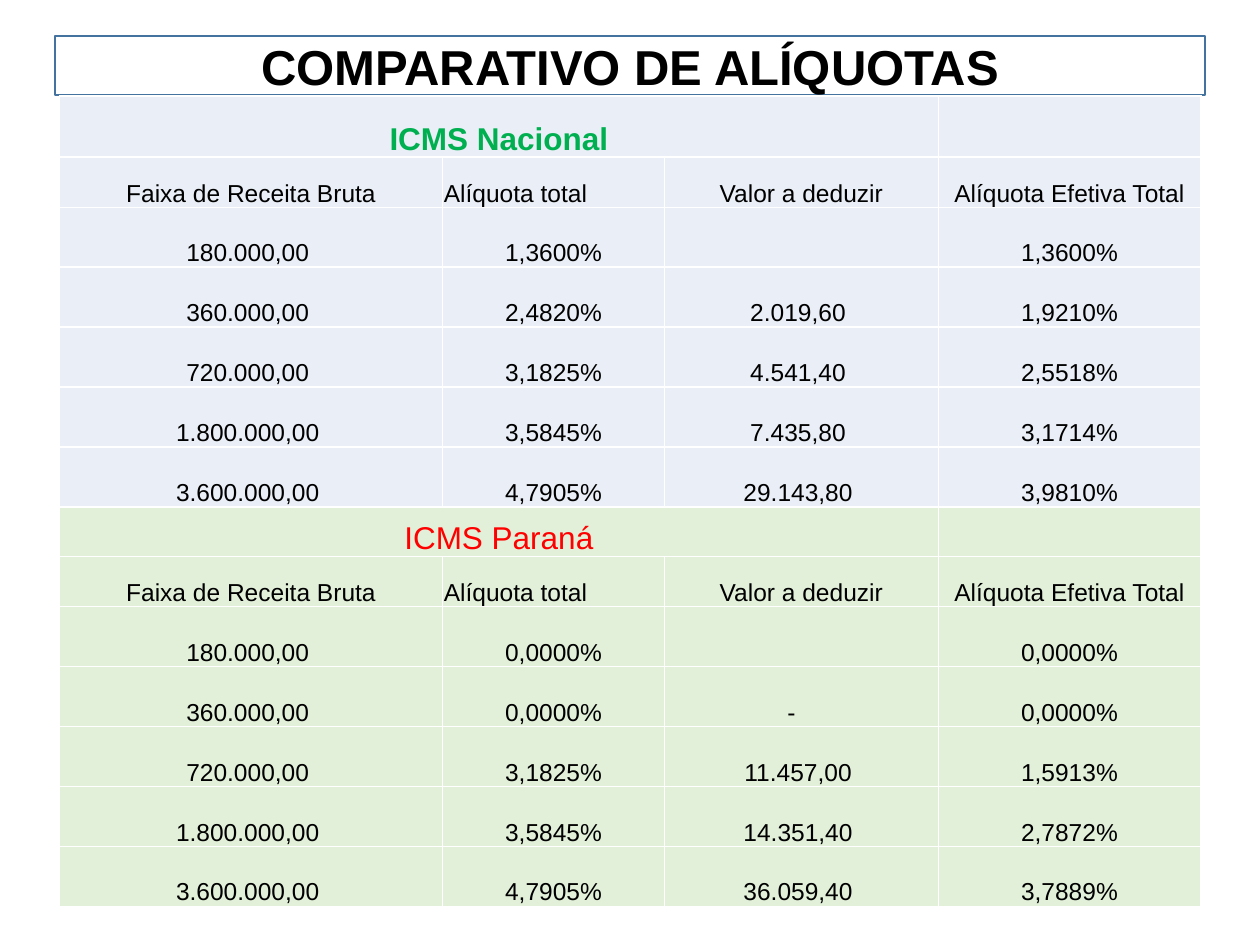
import pptx
import pptx.dml.color
import pptx.enum.text
import pptx.oxml
import pptx.oxml.ns
import pptx.util

Pt = pptx.util.Pt
Align = pptx.enum.text.PP_ALIGN
Anchor = pptx.enum.text.MSO_ANCHOR

COLORS = {
    "white": "FFFFFF",
    "black": "000000",
    "title_line": "43739E",
    "national_text": "00B050",
    "national_fill": "EAEFF7",
    "parana_text": "FF0000",
    "parana_fill": "E2F0D9",
}
HEADERS = ["Faixa de Receita Bruta", "Alíquota total", "Valor a deduzir", "Alíquota Efetiva Total"]
NATIONAL = [
    ["180.000,00", "1,3600%", "", "1,3600%"],
    ["360.000,00", "2,4820%", "2.019,60", "1,9210%"],
    ["720.000,00", "3,1825%", "4.541,40", "2,5518%"],
    ["1.800.000,00", "3,5845%", "7.435,80", "3,1714%"],
    ["3.600.000,00", "4,7905%", "29.143,80", "3,9810%"],
]
PARANA = [
    ["180.000,00", "0,0000%", "", "0,0000%"],
    ["360.000,00", "0,0000%", "-", "0,0000%"],
    ["720.000,00", "3,1825%", "11.457,00", "1,5913%"],
    ["1.800.000,00", "3,5845%", "14.351,40", "2,7872%"],
    ["3.600.000,00", "4,7905%", "36.059,40", "3,7889%"],
]
COLUMN_WIDTHS = [219, 126.75, 156.5, 150]
DATA_HEIGHT = 34.25
ROW_HEIGHTS = [35, 28.75] + [DATA_HEIGHT] * 5 + [28.25, 28.75] + [DATA_HEIGHT] * 5
AMOUNT_COLUMNS = (0, 2)


def rgb(name):
    return pptx.dml.color.RGBColor.from_string(COLORS[name])


class SlideBuilder:
    font = "Arial"

    def __init__(self, slide):
        self.slide = slide

    def add_run(self, paragraph, text, size, color="black", bold=False):
        run = paragraph.add_run()
        run.text = text
        run.font.name = self.font
        run.font.size = Pt(size)
        run.font.bold = bold
        run.font.color.rgb = rgb(color)

    def title(self, text, left, top, width, height):
        shape = self.slide.shapes.title
        shape.left, shape.top, shape.width, shape.height = map(Pt, (left, top, width, height))
        shape.fill.solid()
        shape.fill.fore_color.rgb = rgb("white")
        shape.line.color.rgb = rgb("title_line")
        shape.line.width = Pt(1)
        frame = shape.text_frame
        frame.auto_size = pptx.enum.text.MSO_AUTO_SIZE.NONE
        frame.vertical_anchor = Anchor.MIDDLE
        paragraph = frame.paragraphs[0]
        paragraph.alignment = Align.CENTER
        self.add_run(paragraph, text, 28, bold=True)

    def table(self, left, top, widths, heights):
        table = self.slide.shapes.add_table(
            len(heights), len(widths), Pt(left), Pt(top), Pt(sum(widths)), Pt(sum(heights))
        ).table
        for column, width in zip(table.columns, widths):
            column.width = Pt(width)
        for row, height in zip(table.rows, heights):
            row.height = Pt(height)
        return table

    def borders(self, cell):
        properties = cell._tc.get_or_add_tcPr()
        for index, side in enumerate(("lnL", "lnR", "lnT", "lnB")):
            properties.insert(index, pptx.oxml.parse_xml(
                f'<a:{side} {pptx.oxml.ns.nsdecls("a")} w="{Pt(1)}"><a:solidFill>'
                f'<a:srgbClr val="{COLORS["white"]}"/></a:solidFill></a:{side}>'
            ))

    def cell(self, cell, text, fill, size=14, color="black", bold=False,
             alignment=Align.CENTER, right_inset=0.7):
        cell.fill.solid()
        cell.fill.fore_color.rgb = rgb(fill)
        self.borders(cell)
        cell.vertical_anchor = Anchor.BOTTOM
        cell.margin_left = cell.margin_top = Pt(0.7)
        cell.margin_right = Pt(right_inset)
        cell.margin_bottom = Pt(0)
        paragraph = cell.text_frame.paragraphs[0]
        paragraph.alignment = alignment
        if text:
            self.add_run(paragraph, text, size, color, bold)
        else:
            paragraph.font.size = Pt(size)

    def section(self, table, first_row, heading, rows, fill, color, bold):
        """Fill a heading row, a column-header row and the data rows."""
        for column in range(len(HEADERS)):
            self.cell(table.cell(first_row, column), heading if column == 0 else "",
                      fill, 18, color, bold)
        table.cell(first_row, 0).merge(table.cell(first_row, 2))

        for column, text in enumerate(HEADERS):
            self.cell(table.cell(first_row + 1, column), text, fill,
                      alignment=Align.LEFT if column == 1 else Align.CENTER)
        for row, values in enumerate(rows, first_row + 2):
            for column, text in enumerate(values):
                inset = 4.5 if column in AMOUNT_COLUMNS else 0.7
                if text == "-":
                    inset = 12
                self.cell(table.cell(row, column), text, fill, right_inset=inset)


def main():
    presentation = pptx.Presentation()
    presentation.slide_width = Pt(720)
    presentation.slide_height = Pt(540)
    builder = SlideBuilder(presentation.slides.add_slide(presentation.slide_layouts[5]))
    builder.title("COMPARATIVO DE ALÍQUOTAS", 31.25, 20.75, 657.5, 33.75)
    table = builder.table(34, 54.75, COLUMN_WIDTHS, ROW_HEIGHTS)
    builder.section(table, 0, "ICMS Nacional", NATIONAL, "national_fill", "national_text", True)
    builder.section(table, 7, "ICMS Paraná", PARANA, "parana_fill", "parana_text", False)
    presentation.save("out.pptx")


if __name__ == "__main__":
    main()
